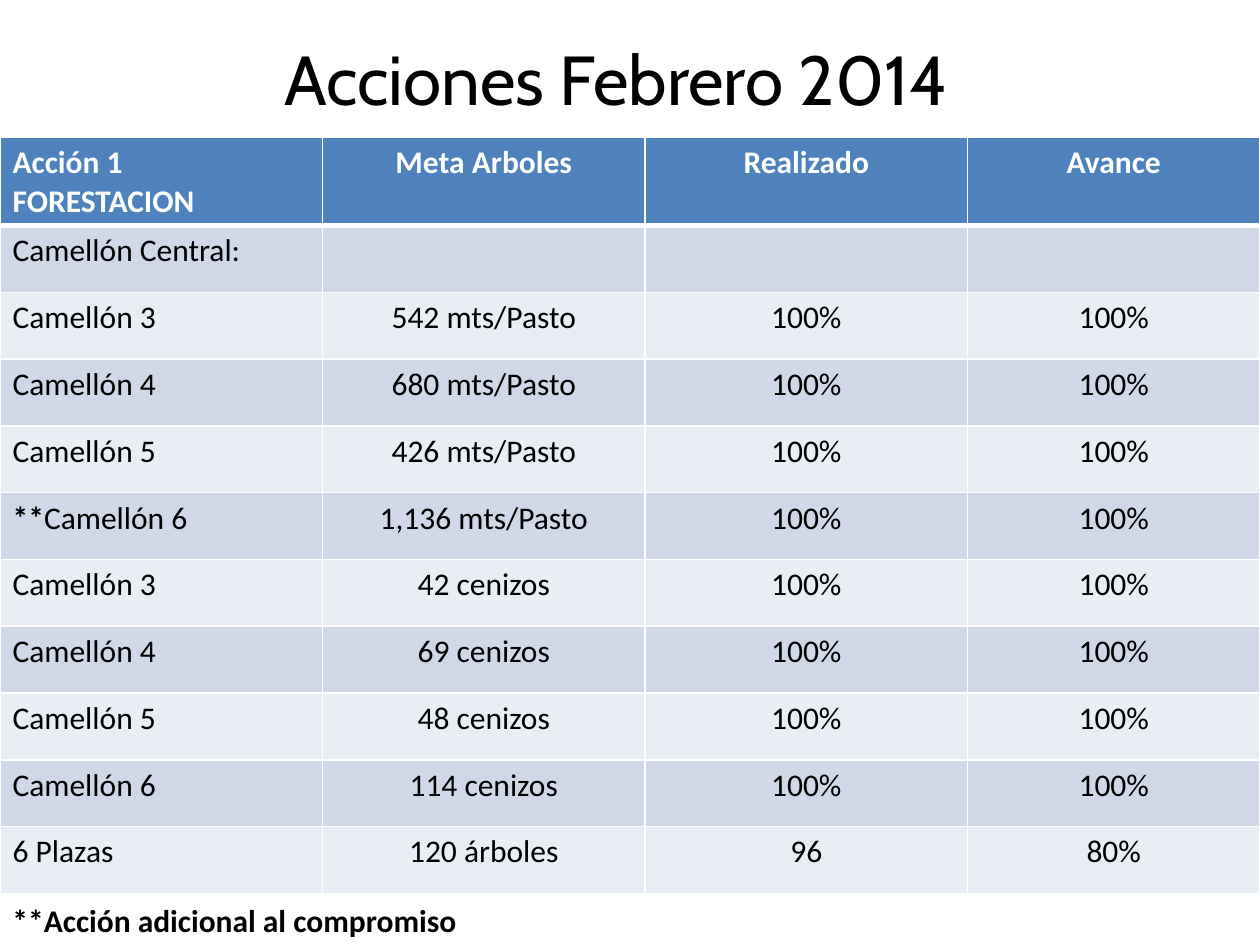
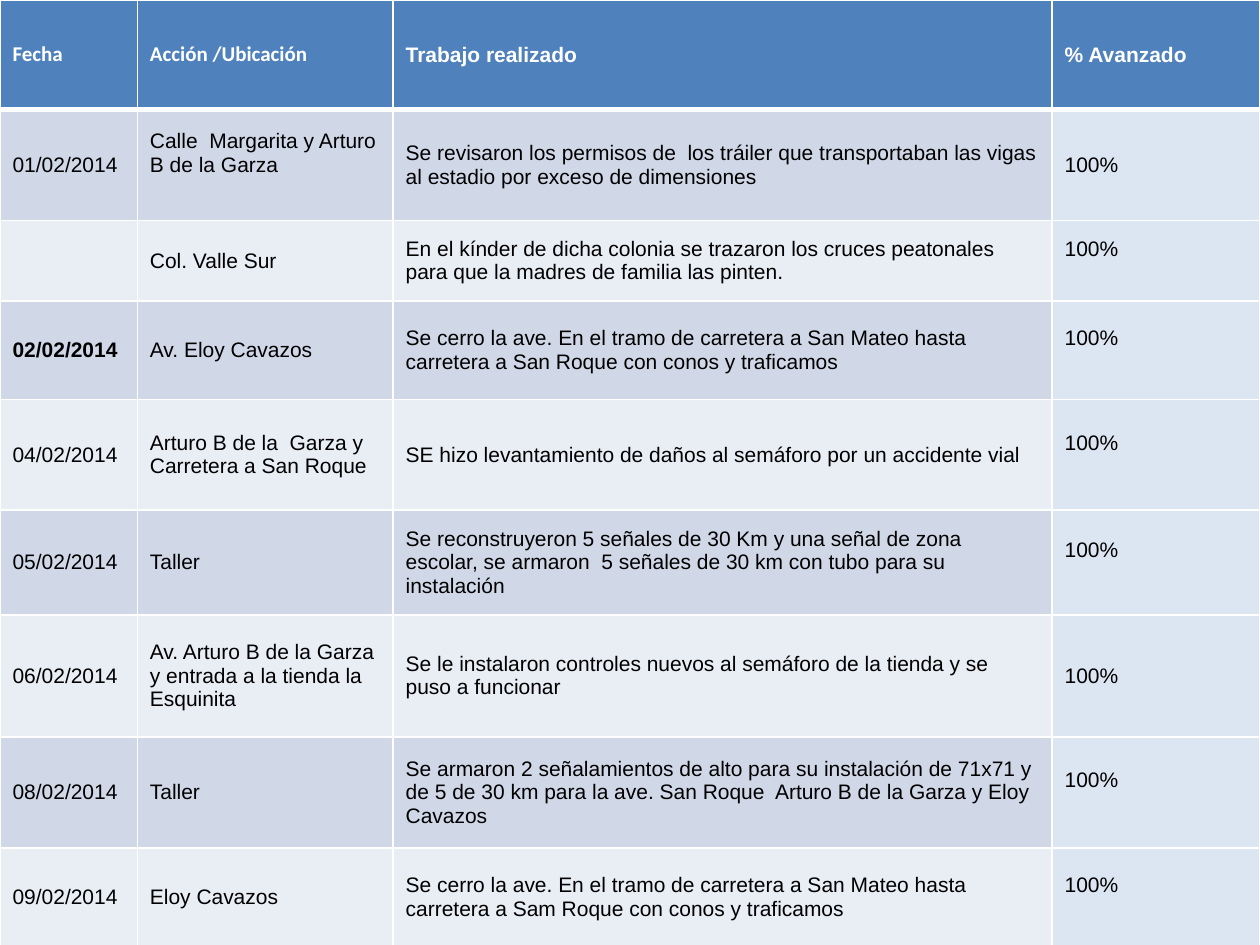
from lxml import etree
from pptx import Presentation
from pptx.dml.color import RGBColor
from pptx.enum.text import MSO_ANCHOR, PP_ALIGN
from pptx.oxml.ns import qn
from pptx.util import Inches, Pt

WHITE = RGBColor(0xFF, 0xFF, 0xFF)
BLACK = RGBColor(0, 0, 0)
HEADER_BLUE = RGBColor(0x4F, 0x81, 0xBD)
BANDS = (RGBColor(0xD0, 0xD8, 0xE8), RGBColor(0xE9, 0xED, 0xF4))
PROGRESS_BLUE = RGBColor(0xDC, 0xE6, 0xF2)

BOLD_STARTS = ("**", "02/02/2014")
RAISED_MARGIN = Inches(0.24)

TITLE = "Acciones Febrero 2014"
NOTE = "**Acción adicional al compromiso"
FORESTATION = [
    ("Acción 1 FORESTACION", "Meta Arboles", "Realizado", "Avance"),
    ("Camellón Central:", "", "", ""),
    ("Camellón 3", "542 mts/Pasto", "100%", "100%"),
    ("Camellón 4", "680 mts/Pasto", "100%", "100%"),
    ("Camellón 5", "426 mts/Pasto", "100%", "100%"),
    ("**Camellón 6", "1,136 mts/Pasto", "100%", "100%"),
    ("Camellón 3", "42 cenizos", "100%", "100%"),
    ("Camellón 4", "69 cenizos", "100%", "100%"),
    ("Camellón 5", "48 cenizos", "100%", "100%"),
    ("Camellón 6", "114 cenizos", "100%", "100%"),
    ("6 Plazas", "120 árboles", "96", "80%"),
]
FORESTATION_COLS = [2.56, 2.56, 2.56, 2.32]
FORESTATION_ROWS = [0.7] + [0.53] * 10

ROADWORKS = [
    ("Fecha", "Acción /Ubicación", "Trabajo realizado", "% Avanzado"),
    ("01/02/2014", "Calle  Margarita y Arturo B de la Garza",
     "Se revisaron los permisos de  los tráiler que transportaban las vigas "
     "al estadio por exceso de dimensiones", "100%"),
    ("", "Col. Valle Sur",
     "En el kínder de dicha colonia se trazaron los cruces peatonales para que "
     "la madres de familia las pinten.", "100%"),
    ("02/02/2014", "Av. Eloy Cavazos",
     "Se cerro la ave. En el tramo de carretera a San Mateo hasta carretera a "
     "San Roque con conos y traficamos", "100%"),
    ("04/02/2014", "Arturo B de la  Garza y Carretera a San Roque",
     "SE hizo levantamiento de daños al semáforo por un accidente vial", "100%"),
    ("05/02/2014", "Taller",
     "Se reconstruyeron 5 señales de 30 Km y una señal de zona escolar, se "
     "armaron  5 señales de 30 km con tubo para su  instalación", "100%"),
    ("06/02/2014", "Av. Arturo B de la Garza y entrada a la tienda la Esquinita",
     "Se le instalaron controles nuevos al semáforo de la tienda y se puso a "
     "funcionar", "100%"),
    ("08/02/2014", "Taller",
     "Se armaron 2 señalamientos de alto para su instalación de 71x71 y de 5 de "
     "30 km para la ave. San Roque  Arturo B de la Garza y Eloy Cavazos", "100%"),
    ("09/02/2014", "Eloy Cavazos",
     "Se cerro la ave. En el tramo de carretera a San Mateo hasta carretera a "
     "Sam Roque con conos y traficamos", "100%"),
]
ROADWORKS_COLS = [1.09, 2.03, 5.23, 1.65]
ROADWORKS_ROWS = [0.87, 0.88, 0.64, 0.78, 0.88, 0.83, 0.97, 0.88, 0.78]
RAISED_CELLS = [(1, 1)] + [(row, 3) for row in (2, 3, 4, 5, 7, 8)]


def write(p, content, size, font, color=BLACK, bold=False):
    """Fill a paragraph; a marked beginning becomes a bold run of its own."""
    start = next((s for s in BOLD_STARTS if content.startswith(s)), "")
    for part, strong in ((start, True), (content[len(start):], bold)):
        if part:
            r = p.add_run()
            r.text = part
            r.font.size, r.font.name = Pt(size), font
            r.font.color.rgb, r.font.bold = color, strong


def add_text(slide, box, content, size, font, align, bold=False, wrap=True):
    tf = slide.shapes.add_textbox(*map(Inches, box)).text_frame
    tf.word_wrap = wrap
    tf.vertical_anchor = MSO_ANCHOR.MIDDLE if wrap else MSO_ANCHOR.TOP
    tf.paragraphs[0].alignment = align
    write(tf.paragraphs[0], content, size, font, bold=bold)


def set_borders(cell, **widths):
    """Draw white borders; widths in points by side: L, R, T, B."""
    tc_pr = cell._tc.get_or_add_tcPr()
    for i, (side, width) in enumerate(widths.items()):
        ln = etree.Element(qn(f"a:ln{side}"), w=str(Pt(width)))
        fill = etree.SubElement(ln, qn("a:solidFill"))
        etree.SubElement(fill, qn("a:srgbClr"), val=str(WHITE))
        tc_pr.insert(i, ln)


def add_grid(slide, top, rows, widths, heights, size):
    """Add a banded table with a blue header row and yield its cells."""
    table = slide.shapes.add_table(
        len(rows), len(widths), 0, Inches(top),
        Inches(sum(widths)), Inches(sum(heights))).table
    for column, width in zip(table.columns, widths):
        column.width = Inches(width)
    for row, height in zip(table.rows, heights):
        row.height = Inches(height)
    for i, contents in enumerate(rows):
        for j, content in enumerate(contents):
            cell = table.cell(i, j)
            cell.fill.solid()
            cell.fill.fore_color.rgb = BANDS[(i - 1) % 2] if i else HEADER_BLUE
            set_borders(cell, L=1, R=1, T=3 if i == 1 else 1, B=1 if i else 3)
            yield i, j, cell, content, dict(
                size=size, color=BLACK if i else WHITE, bold=i == 0)


def add_forestation(slide):
    add_text(slide, (0.39, 0.23, 9, 0.77), TITLE, 39.6, "Cabin", PP_ALIGN.CENTER)
    for i, j, cell, content, style in add_grid(
            slide, 1.09, FORESTATION, FORESTATION_COLS, FORESTATION_ROWS, 18):
        p = cell.text_frame.paragraphs[0]
        p.alignment = PP_ALIGN.CENTER if j else PP_ALIGN.LEFT
        write(p, content, font="Calibri", **style)
    add_text(slide, (0, 7.1, 3.75, 0.4), NOTE, 18, "Calibri", PP_ALIGN.LEFT,
             bold=True, wrap=False)


def add_roadworks(slide):
    for i, j, cell, content, style in add_grid(
            slide, 0, ROADWORKS, ROADWORKS_COLS, ROADWORKS_ROWS, 12):
        cell.vertical_anchor = MSO_ANCHOR.MIDDLE
        if i and j == 3:
            cell.fill.fore_color.rgb = PROGRESS_BLUE
        if (i, j) in RAISED_CELLS:
            cell.margin_bottom = RAISED_MARGIN
        font = "Calibri" if i == 0 and j < 2 else "Arial"
        write(cell.text_frame.paragraphs[0], content, font=font, **style)


def main():
    prs = Presentation()
    prs.slide_width, prs.slide_height = Inches(10), Inches(7.5)
    for build in (add_forestation, add_roadworks):
        build(prs.slides.add_slide(prs.slide_layouts[6]))
    prs.save("out.pptx")


if __name__ == "__main__":
    main()
